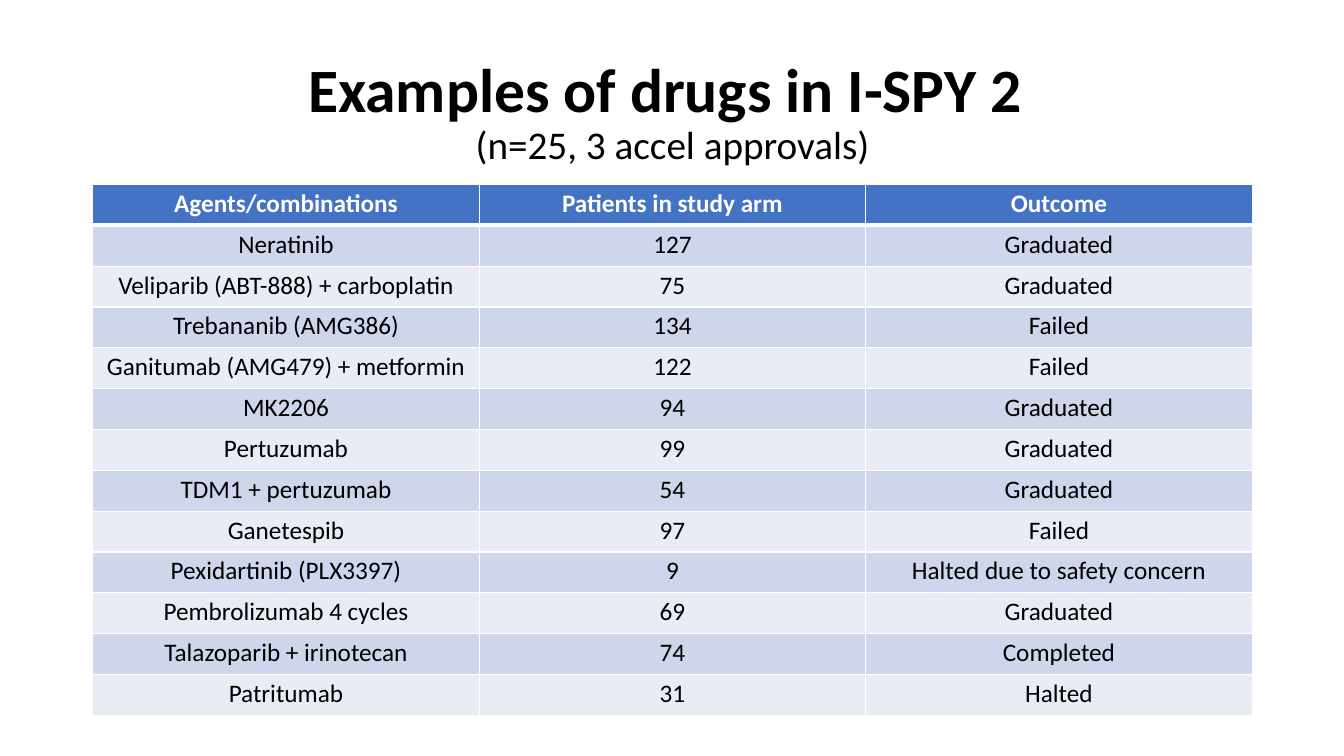
from pptx import Presentation
from pptx.util import Inches, Pt
from pptx.dml.color import RGBColor
from pptx.enum.text import PP_ALIGN as Align, MSO_ANCHOR as Anchor, MSO_AUTO_SIZE as Fit
from pptx.oxml import parse_xml
from pptx.oxml.ns import nsdecls


def style(font, size, color, bold):
    vals = {"name": "Calibri", "size": Pt(size), "bold": bold}
    for key, val in vals.items():
        setattr(font, key, val)
    font.color.rgb = RGBColor.from_string(color)


def edge(cell, side, width):
    cell._tc.get_or_add_tcPr().append(parse_xml(
        f'<a:{side} {nsdecls("a")} w="{Pt(width)}"><a:solidFill>'
        f'<a:srgbClr val="FFFFFF"/></a:solidFill></a:{side}>'))


deck = Presentation()
deck.slide_width, deck.slide_height = Inches(13.33), Inches(7.5)
slide = deck.slides.add_slide(deck.slide_layouts[5])

# Title with a smaller second line
title = slide.shapes.title
spot = {"left": 0.92, "top": 0.4, "width": 11.5, "height": 1.45}
for key, val in spot.items():
    setattr(title, key, Inches(val))
frame = title.text_frame
form = {"word_wrap": True, "auto_size": Fit.NONE, "vertical_anchor": Anchor.MIDDLE}
for key, val in form.items():
    setattr(frame, key, val)
para = frame.paragraphs[0]
para.alignment = Align.CENTER
para.line_spacing = 0.9
head = para.add_run()
head.text = "Examples of drugs in I-SPY 2 "
style(head.font, 44, "000000", True)
para.add_line_break()
sub = para.add_run()
sub.text = "(n=25, 3 accel approvals)"
style(sub.font, 28, "000000", False)

# Table of drugs
rows = [
    ("Agents/combinations", "Patients in study arm", "Outcome"),
    ("Neratinib", "127", "Graduated"),
    ("Veliparib (ABT-888) + carboplatin", "75", "Graduated"),
    ("Trebananib (AMG386)", "134", "Failed"),
    ("Ganitumab (AMG479) + metformin", "122", "Failed"),
    ("MK2206", "94", "Graduated"),
    ("Pertuzumab", "99", "Graduated"),
    ("TDM1 + pertuzumab", "54", "Graduated"),
    ("Ganetespib", "97", "Failed"),
    ("Pexidartinib (PLX3397)", "9", "Halted due to safety concern"),
    ("Pembrolizumab 4 cycles", "69", "Graduated"),
    ("Talazoparib + irinotecan", "74", "Completed"),
    ("Patritumab", "31", "Halted"),
]
table = slide.shapes.add_table(len(rows), 3, Inches(0.92), Inches(1.83),
                               Inches(11.5), Inches(5.27)).table
pads = ("margin_left", "margin_right", "margin_top", "margin_bottom")
for r, row in enumerate(rows):
    top = r == 0
    fill = "4472C4" if top else ("E9EBF5", "CFD5EA")[r % 2]
    for c, text in enumerate(row):
        cell = table.cell(r, c)
        for pad in pads:
            setattr(cell, pad, Inches(0.04))
        # Borders: heavy rule between header and body
        for side in ("lnL", "lnR", "lnT", "lnB"):
            heavy = (r, side) in ((0, "lnB"), (1, "lnT"))
            edge(cell, side, 3 if heavy else 1)
        cell.fill.solid()
        cell.fill.fore_color.rgb = RGBColor.from_string(fill)
        para = cell.text_frame.paragraphs[0]
        para.alignment = Align.CENTER
        run = para.add_run()
        run.text = text
        style(run.font, 18, "FFFFFF" if top else "000000", top)

deck.save("out.pptx")
